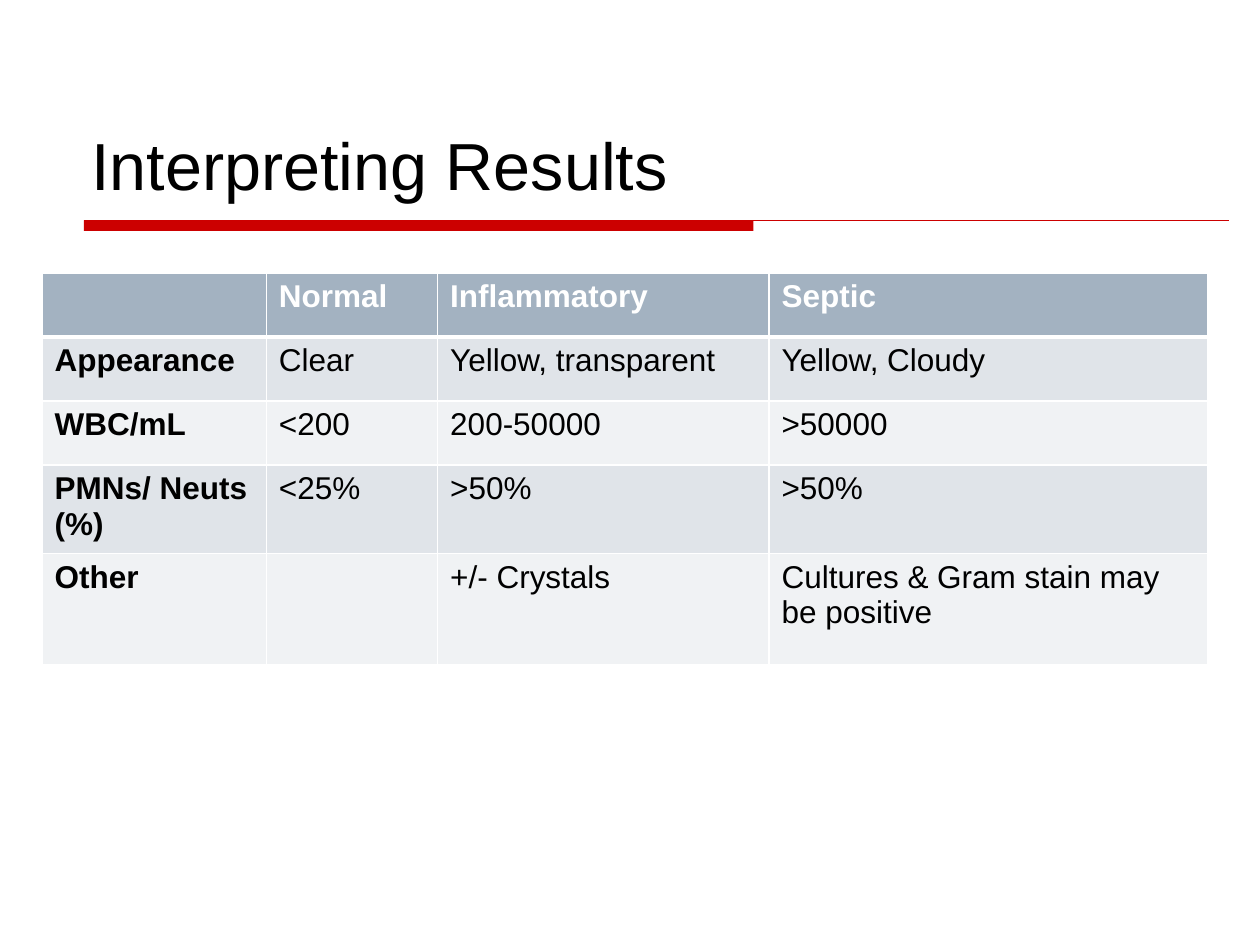
from lxml import etree
from pptx import Presentation
from pptx.dml.color import RGBColor
from pptx.enum.shapes import MSO_CONNECTOR, MSO_SHAPE
from pptx.enum.text import MSO_ANCHOR
from pptx.oxml.ns import qn
from pptx.util import Inches, Pt

RECT = MSO_SHAPE.RECTANGLE
LINE = MSO_CONNECTOR.STRAIGHT
BOTTOM = MSO_ANCHOR.BOTTOM

RED = RGBColor(0xCC, 0x00, 0x00)
BLACK = RGBColor(0x00, 0x00, 0x00)
WHITE = RGBColor(0xFF, 0xFF, 0xFF)
SLATE = RGBColor(0xA3, 0xB2, 0xC1)
BANDS = (RGBColor(0xF0, 0xF2, 0xF4), RGBColor(0xE0, 0xE4, 0xE9))

FONT = "Arial"
COLS, ROWS = 120, 90  # slide grid, twelve units to the inch
WIDTHS = (21.36, 16.32, 31.56, 41.76)
HEIGHTS = (6.1, 6.1, 6.1, 6.1, 10.6)
RESULTS = (
    ("", "Normal", "Inflammatory", "Septic"),
    ("Appearance", "Clear", "Yellow, transparent", "Yellow, Cloudy"),
    ("WBC/mL", "<200", "200-50000", ">50000"),
    ("PMNs/ Neuts (%)", "<25%", ">50%", ">50%"),
    ("Other", "", "+/- Crystals", "Cultures & Gram stain may be positive"),
)


def grid(*units):
    """Turn grid units into lengths."""
    return [Inches(unit / 12) for unit in units]


def style(para, size, color, bold=False):
    font = para.font
    font.name, font.size, font.bold = FONT, Pt(size), bold
    font.color.rgb = color


def add_title(slide, text):
    frame = slide.shapes.add_textbox(*grid(7.5, 4, 105, 16)).text_frame
    frame.word_wrap = True
    frame.vertical_anchor = BOTTOM
    frame.text = text
    style(frame.paragraphs[0], 38, BLACK)


def add_rule(slide):
    """Draw the thick bar and the thin line along its top."""
    bar = slide.shapes.add_shape(RECT, *grid(8, 21, 63.75, 1))
    bar.shadow.inherit = False
    bar.fill.solid()
    bar.fill.fore_color.rgb = RED
    bar.line.fill.background()
    line = slide.shapes.add_connector(LINE, *grid(8, 21, 117, 21))
    line.line.color.rgb = RED
    line.line.width = Pt(0.75)
    etree.SubElement(line._element.spPr, qn("a:effectLst"))


def add_edge(cell, side, width):
    props = cell._tc.get_or_add_tcPr()
    edge = etree.SubElement(props, qn(f"a:ln{side}"), w=str(Pt(width)))
    fill = etree.SubElement(edge, qn("a:solidFill"))
    etree.SubElement(fill, qn("a:srgbClr"), val=str(WHITE))


def fill_cell(cell, text, row, col):
    head = row == 0
    thick = {(0, "B"), (1, "T")}  # edges between header and body
    for side in "LRTB":
        add_edge(cell, side, 3 if (row, side) in thick else 1)
    cell.fill.solid()
    cell.fill.fore_color.rgb = SLATE if head else BANDS[row % 2]
    cell.text = text
    style(cell.text_frame.paragraphs[0], 18,
          WHITE if head else BLACK, head or col == 0)


def add_results(slide):
    spot = grid(4, 26, sum(WIDTHS), sum(HEIGHTS))
    table = slide.shapes.add_table(len(HEIGHTS), len(WIDTHS), *spot).table
    for col, width in zip(table.columns, grid(*WIDTHS)):
        col.width = width
    for row, height in zip(table.rows, grid(*HEIGHTS)):
        row.height = height
    for r, texts in enumerate(RESULTS):
        for c, text in enumerate(texts):
            fill_cell(table.cell(r, c), text, r, c)


def main():
    deck = Presentation()
    deck.slide_width, deck.slide_height = grid(COLS, ROWS)
    slide = deck.slides.add_slide(deck.slide_layouts[6])
    add_rule(slide)
    add_title(slide, "Interpreting Results")
    add_results(slide)
    deck.save("out.pptx")


if __name__ == "__main__":
    main()
